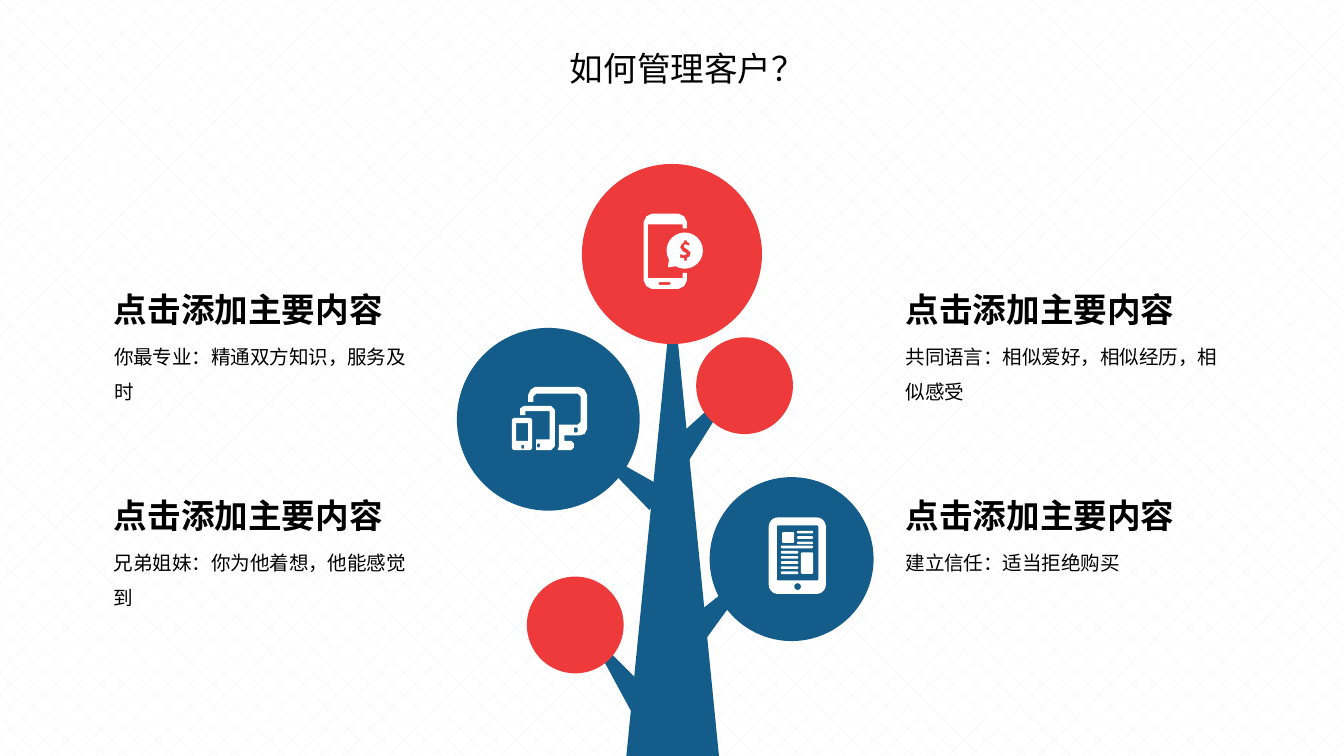
import pptx
import pptx.util
import pptx.dml.color
import pptx.enum.dml
import pptx.enum.shapes
import pptx.enum.text
import lxml.etree
import dataclasses
import math


@dataclasses.dataclass
class Theme:
    blue: str = "145D8A"
    red: str = "EE3A3A"
    white: str = "FFFFFF"
    black: str = "000000"
    hatch: str = "F2F2F2"
    head: float = 18
    body: float = 10.5
    sans: str = "Noto Sans CJK SC"
    bold: str = "Arial"


theme = Theme()
rgb = pptx.dml.color.RGBColor.from_string
kinds = pptx.enum.shapes.MSO_SHAPE
fit = pptx.enum.text.MSO_AUTO_SIZE

deck = pptx.Presentation()
deck.slide_width = pptx.util.Inches(10)
deck.slide_height = deck.slide_width * 9 // 16
col = deck.slide_width / 1000
row = deck.slide_height / 562.5
slide = deck.slides.add_slide(deck.slide_layouts[5])
shapes = slide.shapes

back = slide.background.fill
back.patterned()
back.pattern = pptx.enum.dml.MSO_PATTERN.DIAGONAL_BRICK
back.fore_color.rgb = rgb(theme.hatch)
back.back_color.rgb = rgb(theme.white)


def write(box, place, text, size, font, bold=False, wrap=False, space=1.0):
    x, y, w, h = place
    box.left, box.top = int(x * col), int(y * row)
    box.width, box.height = int(w * col), int(h * row)
    frame = box.text_frame
    frame.text = text
    frame.word_wrap = wrap
    frame.auto_size = fit.SHAPE_TO_FIT_TEXT
    frame.vertical_anchor = pptx.enum.text.MSO_ANCHOR.TOP
    line = frame.paragraphs[0]
    line.alignment = pptx.enum.text.PP_ALIGN.LEFT
    line.line_spacing = space
    run = line.runs[0]
    run.font.size = pptx.util.Pt(size)
    run.font.name = font
    run.font.bold = bold
    run.font.color.rgb = rgb(theme.black)
    if font == theme.sans:
        latin = run.font._element.find(pptx.oxml.ns.qn("a:latin"))
        east = lxml.etree.Element(pptx.oxml.ns.qn("a:ea"), typeface=font)
        latin.addnext(east)


def ring(x, y, w, h, curve):
    points = []
    hubs = [(x + w - curve, y + h - curve), (x + curve, y + h - curve),
            (x + curve, y + curve), (x + w - curve, y + curve)]
    for turn, (across, down) in enumerate(hubs):
        for step in range(7):
            angle = math.radians(90 * turn + 15 * step)
            points.append((across + curve * math.cos(angle), down + curve * math.sin(angle)))
    return points


write(shapes.title, (414, 31, 197, 40), "如何管理客户？", theme.head, theme.sans)

cone, disc = kinds.ISOSCELES_TRIANGLE, kinds.OVAL
blue, red = theme.blue, theme.red
tree = [
    (cone, 466, 215, 69, 348, blue, 0),
    (cone, 447, 461, 20, 69, blue, 323.3),
    (cone, 452, 316, 20, 69, blue, 307.7),
    (cone, 516, 276, 20, 72, blue, 40),
    (cone, 532, 407, 20, 74, blue, 43.7),
]
discs = [(433, 122, 134, red), (518, 251, 72, red), (528, 355, 122, blue),
         (392, 429, 72, red), (340, 244, 136, blue)]
tree += [(disc, x, y, size, size, color, 0) for x, y, size, color in discs]
parts = []
for kind, x, y, w, h, color, turn in tree:
    part = shapes.add_shape(kind, int(x * col), int(y * row), int(w * col), int(h * row))
    part.rotation = turn
    parts.append((part, color))

tablet = [
    ring(572, 385, 42.5, 57, 7),
    ring(578, 391, 31, 41, 1),
    ring(591, 434, 5, 5, 2.5),
    ring(582, 396, 9, 8, 1),
    ring(581, 406, 24, 2, 1),
    ring(596, 411, 9, 16, 1),
]
tablet += [ring(593, 395 + 4 * step, 12, 2, 1) for step in range(3)]
tablet += [ring(581, 410 + 3.8 * step, 13, 2, 1) for step in range(5)]

case = [(479, 165), (481, 161), (485, 159), (505, 159), (509, 161), (511, 165),
        (511, 170), (508, 170), (508, 167), (482, 167), (482, 207), (508, 207),
        (508, 203), (511, 203), (511, 209), (509, 213), (505, 215), (485, 215),
        (481, 213), (479, 209)]
bubble = ring(496, 173, 27, 27, 13.5)
bubble[10] = (497, 199)
dollar = [(509, 179), (509, 180), (507, 182), (506, 184), (508, 187), (510, 188),
          (511, 189), (509, 190), (506, 189), (506, 192), (509, 192), (509, 194),
          (511, 194), (511, 192), (513, 191), (514, 188), (512, 186), (509, 184),
          (509, 182), (511, 182), (513, 183), (513, 181), (511, 180), (511, 179)]
phone = [case, ring(490, 210, 9, 2, 1), bubble, dollar]

screen = [(393, 299), (393, 294), (395, 290), (398, 288), (431, 288), (435, 290),
          (437, 294), (437, 319), (435, 323), (431, 324), (420, 324), (420, 328),
          (425, 328), (427, 330), (427, 333), (425, 335), (415, 335), (416, 332),
          (416, 316), (430, 316), (432, 314), (432, 295), (430, 293), (399, 293),
          (397, 295), (397, 299)]
slate = [(399, 335), (410, 335), (413, 332), (413, 305), (410, 302), (390, 302),
         (387, 304), (387, 309), (391, 309), (391, 306), (409, 306), (409, 327),
         (399, 327)]
gadgets = [
    screen,
    ring(427, 318, 3, 4, 1.5),
    slate,
    ring(399.5, 330, 2.5, 3, 1.2),
    ring(381, 311, 15, 24, 2),
    ring(384, 315, 9, 13, 0),
    ring(388, 331, 2, 3, 1),
]

for icon in [tablet, phone, gadgets]:
    loops = [[(x * col, y * row) for x, y in loop] for loop in icon]
    pen = shapes.build_freeform(*loops[0][0])
    for loop in loops:
        if loop is not loops[0]:
            pen.move_to(*loop[0])
        pen.add_line_segments(loop[1:], close=True)
    parts.append((pen.convert_to_shape(), theme.white))

for part, color in parts:
    part.shadow.inherit = False
    part.fill.solid()
    part.fill.fore_color.rgb = rgb(color)
    part.line.fill.background()

notes = [
    (75, 210, 251, 60, "你最专业：精通双方知识，服务及时"),
    (75, 363, 250, 60, "兄弟姐妹：你为他着想，他能感觉到"),
    (664, 210, 256, 60, "共同语言：相似爱好，相似经历，相似感受"),
    (664, 363, 256, 33, "建立信任：适当拒绝购买"),
]
for x, y, w, h, text in notes:
    write(shapes.add_textbox(0, 0, 0, 0), (x, y, 224, 40), "点击添加主要内容",
          theme.head, theme.bold, bold=True)
    write(shapes.add_textbox(0, 0, 0, 0), (x, y + 33, w, h), text,
          theme.body, theme.sans, wrap=True, space=1.5)

deck.save("out.pptx")
